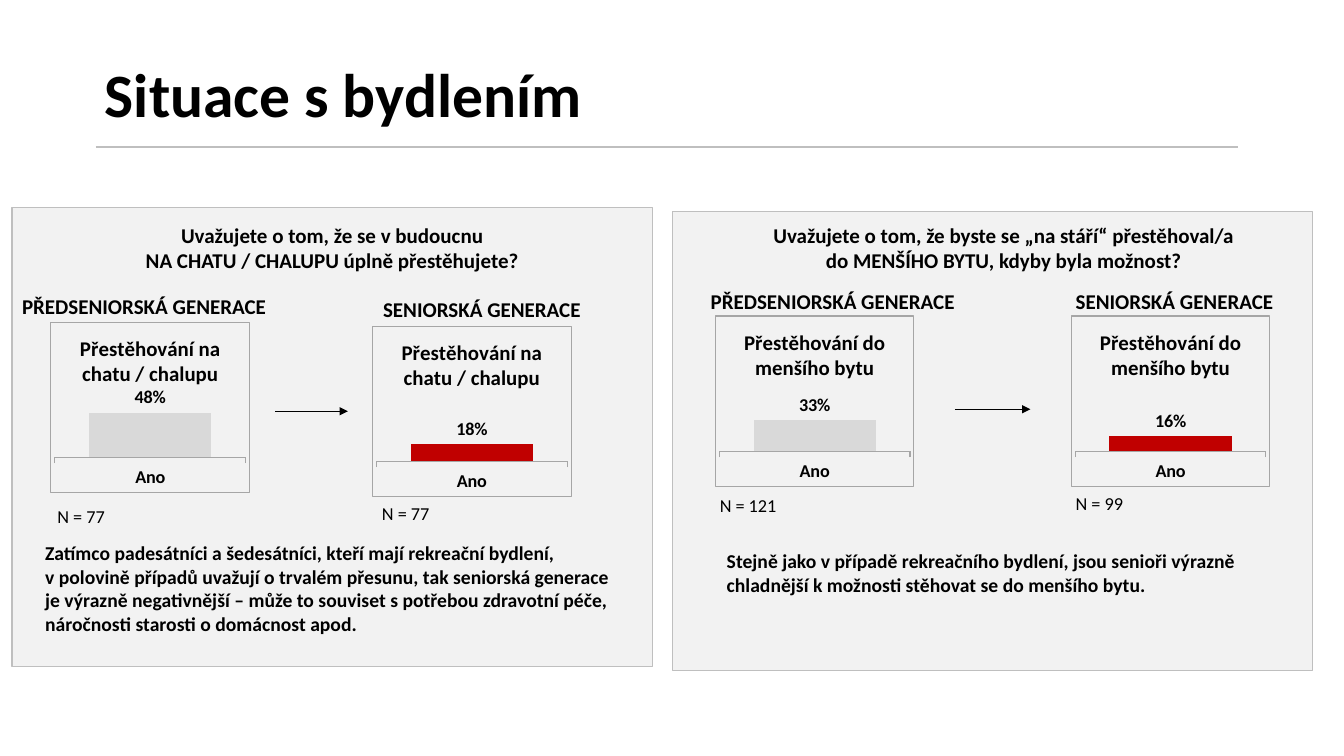
from dataclasses import dataclass

from lxml.etree import SubElement
from pptx import Presentation
from pptx.chart.data import CategoryChartData
from pptx.dml.color import RGBColor
from pptx.enum.chart import XL_CHART_TYPE, XL_LABEL_POSITION, XL_TICK_MARK
from pptx.enum.shapes import MSO_CONNECTOR, MSO_SHAPE
from pptx.enum.text import MSO_ANCHOR, PP_ALIGN
from pptx.oxml import parse_xml
from pptx.oxml.ns import nsdecls, qn
from pptx.util import Inches, Pt


@dataclass(frozen=True)
class Theme:
    font: str = "Calibri"
    text: str = "000000"
    panel: str = "F2F2F2"
    rule: str = "BFBFBF"
    axis: str = "A6A6A6"
    younger: str = "D9D9D9"
    senior: str = "C00000"
    title_size: int = 44
    heading_size: int = 15
    body_size: int = 14
    small_size: int = 13
    base_size: int = 10


THEME = Theme()
TITLE = "Situace s bydlením"
YOUNGER = "PŘEDSENIORSKÁ GENERACE"
SENIOR = "SENIORSKÁ GENERACE"
PANEL_SIZE = (6.35, 4.55)
CHART_SIZE = (1.98, 1.7)

PANELS = [
    {
        "at": (0.12, 2.06),
        "question": ["Uvažujete o tom, že se v budoucnu",
                     "NA CHATU / CHALUPU úplně přestěhujete?"],
        "question_box": (0.47, 2.16, 5.65, 0.61),
        "chart_title": "Přestěhování na chatu / chalupu",
        "groups": [
            {"label": YOUNGER, "label_box": (0.12, 2.86, 2.79, 0.35), "align": PP_ALIGN.LEFT,
             "chart_at": (0.5, 3.19), "value": 0.48, "color": THEME.younger,
             "sample": "N = 77", "sample_box": (0.47, 4.96, 0.71, 0.32)},
            {"label": SENIOR, "label_box": (3.45, 2.89, 2.66, 0.35), "align": PP_ALIGN.CENTER,
             "chart_at": (3.69, 3.23), "value": 0.18, "color": THEME.senior,
             "sample": "N = 77", "sample_box": (3.69, 4.93, 0.71, 0.32)},
        ],
        "arrow": (2.73, 3.45, 4.08),
        "comment": ["Zatímco padesátníci a šedesátníci, kteří mají rekreační bydlení,",
                    "v polovině případů uvažují o trvalém přesunu, tak seniorská generace "
                    "je výrazně negativnější – může to souviset s potřebou zdravotní péče, "
                    "náročnosti starosti o domácnost apod."],
        "comment_box": (0.35, 5.32, 5.96, 1.04),
    },
    {
        "at": (6.67, 2.1),
        "question": ["Uvažujete o tom, že byste se „na stáří“ přestěhoval/a",
                     "do MENŠÍHO BYTU, kdyby byla možnost?"],
        "question_box": (7.13, 2.16, 5.65, 0.61),
        "chart_title": "Přestěhování do menšího bytu",
        "groups": [
            {"label": YOUNGER, "label_box": (6.95, 2.81, 2.66, 0.35), "align": PP_ALIGN.LEFT,
             "chart_at": (7.09, 3.13), "value": 0.33, "color": THEME.younger,
             "sample": "N = 121", "sample_box": (7.04, 4.85, 0.85, 0.32)},
            {"label": SENIOR, "label_box": (10.57, 2.81, 2.21, 0.35), "align": PP_ALIGN.LEFT,
             "chart_at": (10.62, 3.13), "value": 0.16, "color": THEME.senior,
             "sample": "N = 99", "sample_box": (10.57, 4.83, 0.78, 0.32)},
        ],
        "arrow": (9.47, 10.22, 4.06),
        "comment": ["Stejně jako v případě rekreačního bydlení, jsou senioři výrazně "
                    "chladnější k možnosti stěhovat se do menšího bytu."],
        "comment_box": (7.11, 5.4, 5.7, 0.57),
    },
]


def inches(values):
    return [Inches(value) for value in values]


def style_font(font, size, bold=True):
    font.name = THEME.font
    font.size = Pt(size)
    font.bold = bold
    font.color.rgb = RGBColor.from_string(THEME.text)


def fill_paragraph(paragraph, lines, size, bold=True, align=PP_ALIGN.LEFT):
    paragraph.alignment = align
    for index, line in enumerate(lines):
        if index:
            paragraph.add_line_break()
        run = paragraph.add_run()
        run.text = line
        style_font(run.font, size, bold)


def add_text(slide, box, lines, size, bold=True, align=PP_ALIGN.LEFT):
    frame = slide.shapes.add_textbox(*inches(box)).text_frame
    frame.word_wrap = True
    fill_paragraph(frame.paragraphs[0], lines, size, bold, align)


def add_title(slide):
    title = slide.shapes.title
    title.left, title.top, title.width, title.height = inches((0.94, 0.33, 10.78, 1.28))
    title.text_frame.vertical_anchor = MSO_ANCHOR.MIDDLE
    paragraph = title.text_frame.paragraphs[0]
    paragraph.line_spacing = 0.9
    fill_paragraph(paragraph, [TITLE], THEME.title_size)


def add_line(slide, left, right, y, color, width, arrow=False):
    line = slide.shapes.add_connector(MSO_CONNECTOR.STRAIGHT, *inches((left, y, right, y)))
    line.line.color.rgb = RGBColor.from_string(color)
    line.line.width = Pt(width)
    properties = line.element.spPr
    if arrow:
        SubElement(properties.find(qn("a:ln")), qn("a:tailEnd"), type="triangle")
    SubElement(properties, qn("a:effectLst"))


def add_panel_background(slide, at):
    shape = slide.shapes.add_shape(MSO_SHAPE.RECTANGLE, *inches(at + PANEL_SIZE))
    shape.shadow.inherit = False
    shape.fill.solid()
    shape.fill.fore_color.rgb = RGBColor.from_string(THEME.panel)
    shape.line.color.rgb = RGBColor.from_string(THEME.rule)
    shape.line.width = Pt(1)


def add_chart(slide, title, group):
    data = CategoryChartData(number_format="0%")
    data.categories = ["Ano"]
    data.add_series("Series 1", [group["value"]])
    chart = slide.shapes.add_chart(
        XL_CHART_TYPE.COLUMN_CLUSTERED, *inches(group["chart_at"] + CHART_SIZE), data).chart
    style_font(chart.font, THEME.base_size, False)
    chart.has_legend = False
    chart.has_title = True
    fill_paragraph(chart.chart_title.text_frame.paragraphs[0], [title],
                   THEME.heading_size, align=PP_ALIGN.CENTER)
    chart.chart_title.include_in_layout = False

    value_axis = chart.value_axis
    value_axis.minimum_scale = 0
    value_axis.maximum_scale = 0.65
    value_axis.has_major_gridlines = False
    value_axis.visible = False
    category_axis = chart.category_axis
    category_axis.major_tick_mark = XL_TICK_MARK.OUTSIDE
    category_axis.format.line.color.rgb = RGBColor.from_string(THEME.axis)
    category_axis.format.line.width = Pt(0.75)
    style_font(category_axis.tick_labels.font, THEME.small_size)

    plot = chart.plots[0]
    plot.gap_width = 56
    plot.overlap = -27
    plot.vary_by_categories = False
    series = plot.series[0]
    series.format.fill.solid()
    series.format.fill.fore_color.rgb = RGBColor.from_string(group["color"])
    labels = series.data_labels
    labels.show_value = True
    labels.number_format = "0%"
    labels.number_format_is_linked = False
    labels.position = XL_LABEL_POSITION.OUTSIDE_END
    style_font(labels.font, THEME.small_size)

    border = parse_xml(
        f'<c:spPr {nsdecls("c", "a")}><a:noFill/><a:ln w="{Pt(0.75)}"><a:solidFill>'
        f'<a:srgbClr val="{THEME.axis}"/></a:solidFill></a:ln></c:spPr>')
    chart.element.find(qn("c:chart")).addnext(border)


def add_panel(slide, panel):
    add_panel_background(slide, panel["at"])
    add_text(slide, panel["question_box"], panel["question"],
             THEME.heading_size, align=PP_ALIGN.CENTER)
    for group in panel["groups"]:
        add_chart(slide, panel["chart_title"], group)
        add_text(slide, group["label_box"], [group["label"]],
                 THEME.heading_size, align=group["align"])
        add_text(slide, group["sample_box"], [group["sample"]], THEME.small_size, bold=False)
    add_line(slide, *panel["arrow"], THEME.text, 0.5, arrow=True)
    add_text(slide, panel["comment_box"], panel["comment"], THEME.body_size)


def main():
    presentation = Presentation()
    presentation.slide_width, presentation.slide_height = inches((13.33, 7.5))
    slide = presentation.slides.add_slide(presentation.slide_layouts[5])
    add_title(slide)
    add_line(slide, 0.95, 12.28, 1.46, THEME.rule, 1.5)
    for panel in PANELS:
        add_panel(slide, panel)
    presentation.save("out.pptx")


if __name__ == "__main__":
    main()
